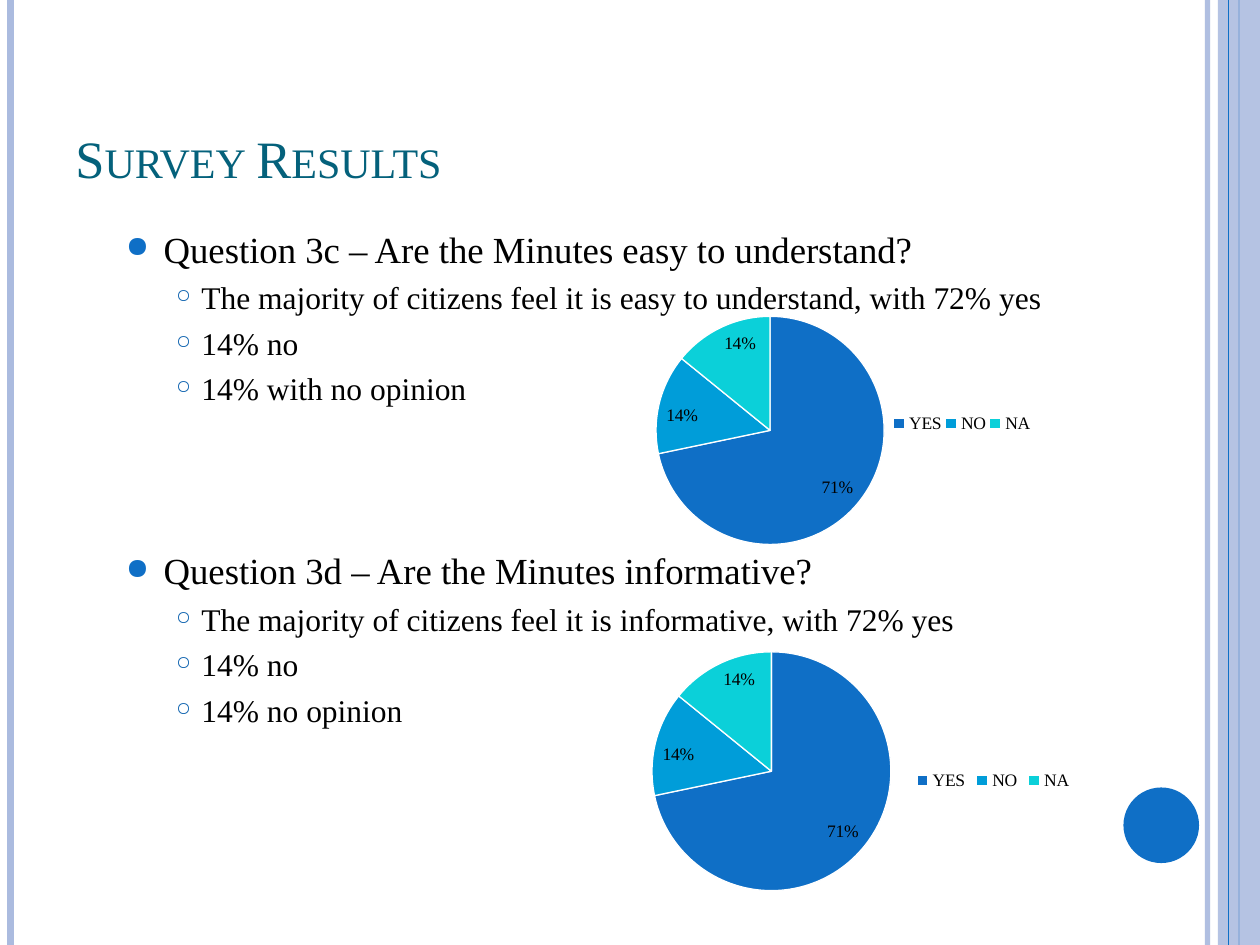
"""Build the survey results slide with two question summaries and their pie charts."""
from lxml import etree
from pptx import Presentation
from pptx.chart.data import CategoryChartData
from pptx.dml.color import RGBColor
from pptx.enum.chart import XL_CHART_TYPE, XL_LABEL_POSITION, XL_LEGEND_POSITION
from pptx.enum.shapes import MSO_CONNECTOR, MSO_SHAPE
from pptx.enum.text import MSO_ANCHOR
from pptx.oxml.ns import qn
from pptx.util import Pt

PIE = XL_CHART_TYPE.PIE
INSIDE_END = XL_LABEL_POSITION.INSIDE_END
LEGEND_TOP = XL_LEGEND_POSITION.TOP
STRAIGHT = MSO_CONNECTOR.STRAIGHT
RECTANGLE, OVAL = MSO_SHAPE.RECTANGLE, MSO_SHAPE.OVAL
TOP, BOTTOM = MSO_ANCHOR.TOP, MSO_ANCHOR.BOTTOM

THEME = {
    "font": "Times New Roman",
    "title": "04617B", "text": "000000", "white": "FFFFFF",
    "accent": "0F6FC6", "pale": "ABBBDF", "sub_bullet": "0D62AF",
    "slices": ["0F6FC6", "009DD9", "0BD0D9"],
    "title_size": 30, "chart_size": 10,
}
SLIDE_WIDTH, SLIDE_HEIGHT = 720, 540
TITLE = "Survey Results"
TITLE_BOX = (36, 21.6, 588, 90)
BODY_BOX = (36, 126, 588, 384)
QUESTIONS = [
    ("Question 3c – Are the Minutes easy to understand?",
     ["The majority of citizens feel it is easy to understand, with 72% yes",
      "14% no", "14% with no opinion"]),
    ("Question 3d – Are the Minutes informative?",
     ["The majority of citizens feel it is informative, with 72% yes",
      "14% no", "14% no opinion"]),
]
QUESTION_GAP = 80.5
LEVELS = {
    "question": {"size": 21, "margin": 50.4, "indent": -21.6, "before": 5,
                 "bullet": "●", "color": THEME["accent"], "scale": 80},
    "answer": {"size": 18, "margin": 72, "indent": -14.4, "before": 4.4,
               "bullet": "○", "color": THEME["sub_bullet"], "scale": 60},
}
ANSWERS = {"YES": 71, "NO": 14, "NA": 14}
CHARTS = [
    {"box": (324, 180, 318, 132), "plot": (0.16, 0, 0.41, 1),
     "legend": (0.58, 0.42, 0.26, 0.1)},
    {"box": (240, 366, 390, 151), "plot": (0.34, 0.04, 0.35, 0.91),
     "legend": (0.72, 0.48, 0.24, 0.1)},
]
EDGE_LINES = [(690, "pale", 3, 93), (6, "pale", 4.5, 100), (708, "accent", 1.5, 100)]
BAND = (696, 0, 24, SLIDE_HEIGHT)
BAND_LINE = (702, "accent", 0.75, 100)
DISC = (642, 450, 43.2, 43.2)


def color(value):
    return RGBColor.from_string(value)


def points(values):
    return [Pt(value) for value in values]


def set_alpha(fill_parent, percent):
    for item in fill_parent.iter(qn("a:srgbClr")):
        etree.SubElement(item, qn("a:alpha"), val=str(percent * 1000))


def style_font(font, size, value):
    formats = {"name": THEME["font"], "size": Pt(size)}
    for name, setting in formats.items():
        setattr(font, name, setting)
    font.color.rgb = color(value)


def add_edge_line(page, left, tone, width, alpha):
    line = page.shapes.add_connector(STRAIGHT, *points((left, 0, left, SLIDE_HEIGHT)))
    line.line.color.rgb = color(THEME[tone])
    line.line.width = Pt(width)
    properties = line._element.spPr
    if alpha < 100:
        set_alpha(properties, alpha)
    etree.SubElement(properties, qn("a:effectLst"))


def add_filled(page, kind, box, value):
    shape = page.shapes.add_shape(kind, *points(box))
    shape.shadow.inherit = False
    shape.fill.solid()
    shape.fill.fore_color.rgb = color(value)
    shape.line.fill.background()
    return shape


def add_text_frame(page, box, anchor):
    frame = page.shapes.add_textbox(*points(box)).text_frame
    frame.word_wrap = True
    frame.vertical_anchor = anchor
    return frame


def add_title(page):
    frame = add_text_frame(page, TITLE_BOX, BOTTOM)
    span = frame.paragraphs[0].add_run()
    span.text = TITLE
    style_font(span.font, THEME["title_size"], THEME["title"])
    span.font._element.set("cap", "small")


def fill_para(para, text, level, before):
    para.space_before = Pt(before)
    span = para.add_run()
    span.text = text
    style_font(span.font, level["size"], THEME["text"])
    properties = para._p.get_or_add_pPr()
    for name, key in {"marL": "margin", "indent": "indent"}.items():
        properties.set(name, str(int(Pt(level[key]))))
    tint = etree.SubElement(properties, qn("a:buClr"))
    etree.SubElement(tint, qn("a:srgbClr"), val=level["color"])
    etree.SubElement(properties, qn("a:buSzPct"), val=str(level["scale"] * 1000))
    etree.SubElement(properties, qn("a:buChar"), char=level["bullet"])


def add_body(page):
    frame = add_text_frame(page, BODY_BOX, TOP)
    for number, (question, answers) in enumerate(QUESTIONS):
        level = LEVELS["question"]
        para = frame.add_paragraph() if number else frame.paragraphs[0]
        fill_para(para, question, level, QUESTION_GAP if number else level["before"])
        for answer in answers:
            level = LEVELS["answer"]
            fill_para(frame.add_paragraph(), answer, level, level["before"])


def make_layout(frame, inner):
    layout = etree.Element(qn("c:layout"))
    manual = etree.SubElement(layout, qn("c:manualLayout"))
    settings = [("layoutTarget", "inner")] if inner else []
    settings += [("xMode", "edge"), ("yMode", "edge"), *zip("xywh", frame)]
    for name, value in settings:
        etree.SubElement(manual, qn(f"c:{name}"), val=str(value))
    return layout


def place_part(part, frame, inner=False):
    for old in part.findall(qn("c:layout")):
        part.remove(old)
    position = part.find(qn("c:legendPos"))
    index = 0 if position is None else part.index(position) + 1
    part.insert(index, make_layout(frame, inner))


def add_pie(page, box, plot, legend):
    data = CategoryChartData()
    data.categories = list(ANSWERS)
    data.add_series("Series 1", list(ANSWERS.values()))
    chart = page.shapes.add_chart(PIE, *points(box), data).chart
    style_font(chart.font, THEME["chart_size"], THEME["text"])
    chart.has_title = False
    chart.has_legend = True
    chart.legend.position = LEGEND_TOP
    chart.legend.include_in_layout = False
    pie = chart.plots[0]
    pie.vary_by_categories = True
    for index, value in enumerate(THEME["slices"]):
        slice_format = pie.series[0].points[index].format
        slice_format.fill.solid()
        slice_format.fill.fore_color.rgb = color(value)
        slice_format.line.color.rgb = color(THEME["white"])
        slice_format.line.width = Pt(0.75)
    pie.has_data_labels = True
    formats = {"show_value": True, "show_percentage": False, "number_format": '0"%"',
               "number_format_is_linked": False, "position": INSIDE_END}
    for name, setting in formats.items():
        setattr(pie.data_labels, name, setting)
    place_part(chart._chartSpace.chart.plotArea, plot, inner=True)
    place_part(chart.legend._element, legend)


def main():
    deck = Presentation()
    deck.slide_width, deck.slide_height = points((SLIDE_WIDTH, SLIDE_HEIGHT))
    page = deck.slides.add_slide(deck.slide_layouts[6])
    for line in EDGE_LINES:
        add_edge_line(page, *line)
    band = add_filled(page, RECTANGLE, BAND, THEME["pale"])
    set_alpha(band._element.spPr, 87)
    add_edge_line(page, *BAND_LINE)
    add_filled(page, OVAL, DISC, THEME["accent"])
    add_title(page)
    add_body(page)
    for chart in CHARTS:
        add_pie(page, **chart)
    deck.save("out.pptx")


if __name__ == "__main__":
    main()
